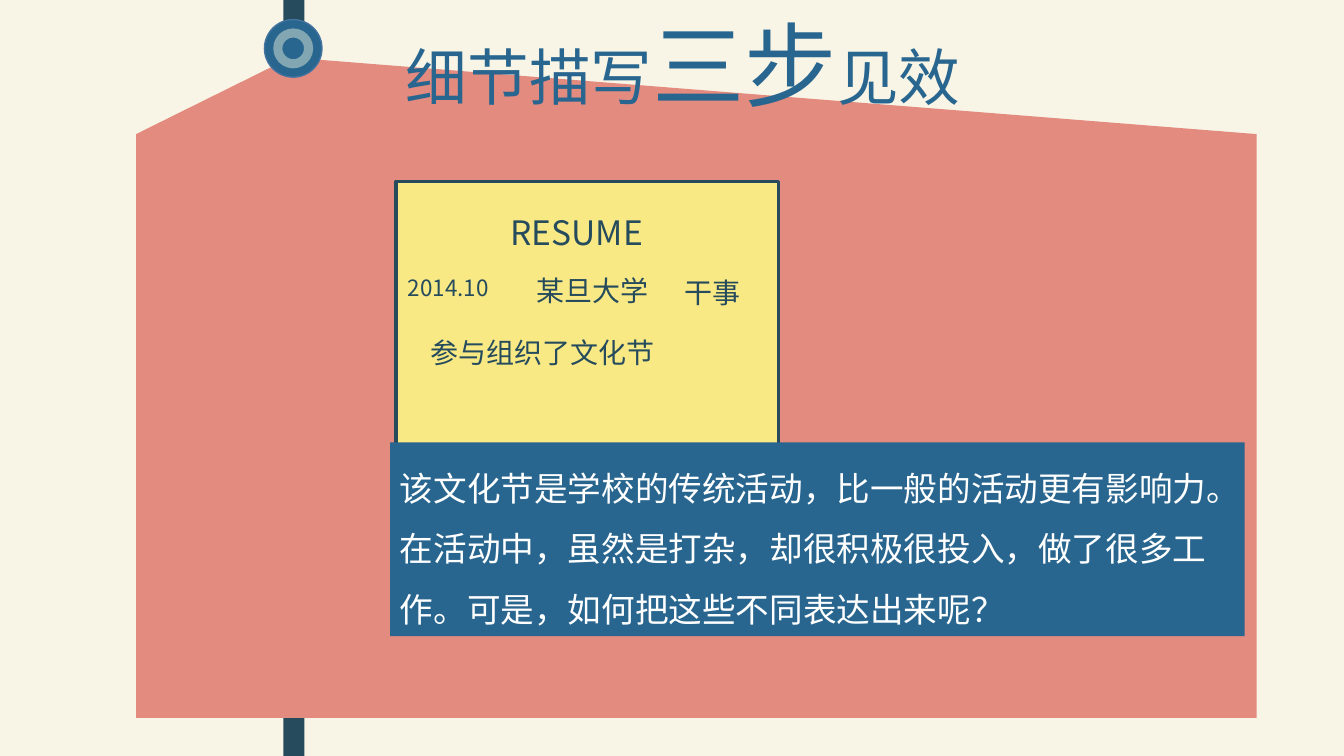
from lxml.etree import SubElement
from pptx import Presentation
from pptx.dml.color import RGBColor
from pptx.enum.shapes import MSO_SHAPE
from pptx.enum.text import MSO_ANCHOR, PP_ALIGN
from pptx.oxml.ns import qn
from pptx.util import Cm, Pt

CREAM, CORAL, YELLOW = "F8F5E7", "E48B7F", "F8E985"
BLUE, NAVY, SAGE, WHITE = "29668F", "254B5C", "83A6B3", "FFFFFF"
JP, SC = "Noto Sans CJK JP", "Noto Sans CJK SC"


def paint(fill, color):
    """Make a fill solid in a hex colour."""
    fill.solid()
    fill.fore_color.rgb = RGBColor.from_string(color)


def add_block(s, kind, x, y, w, h, color, line=None, width=1):
    """Add a flat preset shape, measured in centimetres."""
    sp = s.shapes.add_shape(kind, Cm(x), Cm(y), Cm(w), Cm(h))
    sp.shadow.inherit = False
    paint(sp.fill, color)
    if line:
        paint(sp.line.fill, line)
        sp.line.width = Pt(width)
    else:
        sp.line.fill.background()
    return sp


def write(sp, *runs, font=JP, color=NAVY, spacing=None):
    """Write (text, size) runs into one left-aligned paragraph."""
    tf = sp.text_frame
    tf.word_wrap = True
    tf.vertical_anchor = MSO_ANCHOR.TOP
    p = tf.paragraphs[0]
    p.alignment = PP_ALIGN.LEFT
    if spacing:
        p.line_spacing = spacing
    for text, size in runs:
        r = p.add_run()
        r.text = text
        r.font.size = Pt(size)
        r.font.name = font
        r.font.color.rgb = RGBColor.from_string(color)
        SubElement(r.font._element, qn("a:ea"), typeface=font)


def add_label(s, x, y, w, h, *runs, **style):
    """Add a text box, measured in centimetres."""
    write(s.shapes.add_textbox(Cm(x), Cm(y), Cm(w), Cm(h)), *runs, **style)


def add_board(s, x, y, w, h, roof=1.93):
    """Draw the board with its slanted roof."""
    add_block(s, MSO_SHAPE.RECTANGLE, x, y + roof, w, h - roof, CORAL)
    sp = add_block(s, MSO_SHAPE.ISOSCELES_TRIANGLE, x, y, w, roof, CORAL)
    sp.adjustments[0] = 0.138


def add_pin(s, cx, cy):
    """Draw the concentric rings of the pin around a centre."""
    for d, color, line in ((1.45, BLUE, "43739E"), (0.97, SAGE, SAGE), (0.58, BLUE, SAGE)):
        add_block(s, MSO_SHAPE.OVAL, cx - d / 2, cy - d / 2, d, d, color, line)


def add_resume(s, x, y, w, h):
    """Draw the resume card and its entries."""
    add_block(s, MSO_SHAPE.RECTANGLE, x, y, w, h, YELLOW, NAVY, 2.25)
    entries = (
        ("RESUME", 24, SC, 2.64, 0.64, 5.26),
        ("2014.10", 16, SC, 0.05, 2.21, 5.26),
        ("某旦大学", 20, JP, 3.28, 2.19, 5.26),
        ("干事", 20, JP, 7.01, 2.24, 5.26),
        ("参与组织了文化节", 20, JP, 0.61, 3.76, 7.92),
    )
    for text, size, font, dx, dy, width in entries:
        add_label(s, x + dx, y + dy, width, 1.12, (text, size), font=font)


def add_note(s, x, y, w, h):
    """Draw the comment panel."""
    sp = add_block(s, MSO_SHAPE.RECTANGLE, x, y, w, h, BLUE)
    text = ("该文化节是学校的传统活动，比一般的活动更有影响力。"
            "在活动中，虽然是打杂，却很积极很投入，做了很多工作。"
            "可是，如何把这些不同表达出来呢？")
    write(sp, (text, 24), font=SC, color=WHITE, spacing=1.5)


def main():
    """Build and save the slide."""
    prs = Presentation()
    prs.slide_width, prs.slide_height = Cm(33.87), Cm(19.05)
    s = prs.slides.add_slide(prs.slide_layouts[6])
    paint(s.background.fill, CREAM)
    add_block(s, MSO_SHAPE.RECTANGLE, 7.14, 0, 0.53, 19.05, NAVY)
    add_board(s, 3.43, 1.45, 28.24, 16.64)
    add_label(s, 9.98, 0.08, 21.23, 3.07,
              ("细节描写", 44), ("三步", 66), ("见效", 44), color=BLUE)
    add_pin(s, 7.39, 1.22)
    add_resume(s, 9.98, 4.57, 9.65, 11.33)
    add_note(s, 9.83, 11.15, 21.54, 4.88)
    prs.save("out.pptx")


if __name__ == "__main__":
    main()
